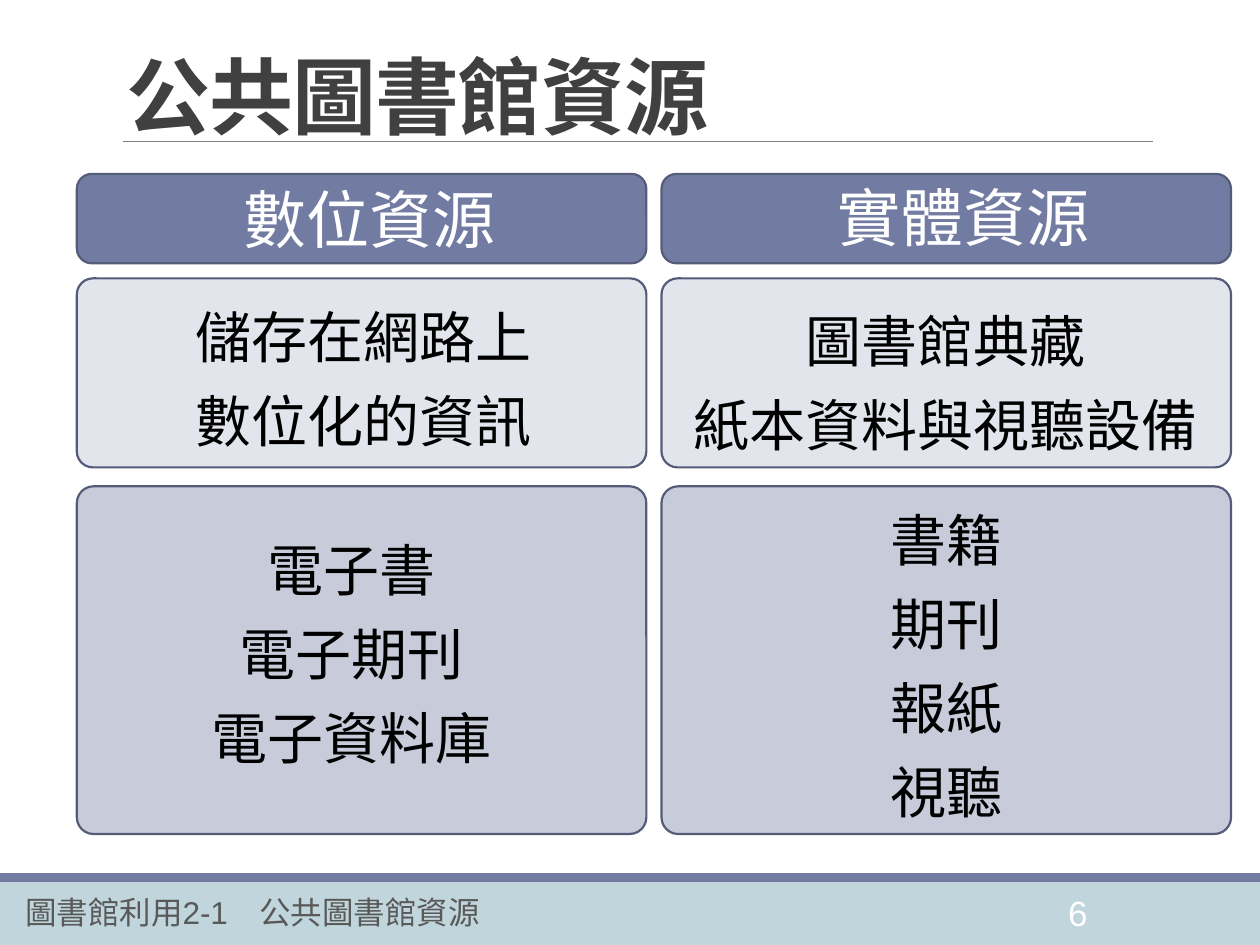
from pptx import Presentation
from pptx import util as u
from pptx.dml.color import RGBColor
from pptx.enum import shapes, text
from pptx.oxml import parse_xml
from pptx.oxml.ns import nsdecls, qn

WHITE = RGBColor(0xFF, 0xFF, 0xFF)
BLACK = RGBColor(0, 0, 0)
TITLE = RGBColor(0x40, 0x40, 0x40)
FOOTER = RGBColor(0x59, 0x59, 0x59)
RULE = RGBColor(0x80, 0x80, 0x80)
BAND = RGBColor(0xC0, 0xD6, 0xDC)
INDIGO = RGBColor(0x72, 0x7C, 0xA3)
OUTLINE = RGBColor(0x54, 0x5C, 0x79)
PALE = RGBColor(0xE3, 0xE5, 0xED)
MID = RGBColor(0xC7, 0xCB, 0xDA)

CJK = "Noto Sans CJK SC"
COLUMNS = (0.61, 5.25)
CARD_W = 4.52
ROWS = (
    (2.21, 1.5, PALE, 0.085),
    (3.86, 2.76, MID, 0.048),
    (1.38, 0.71, INDIGO, 0.167),
)
TEXTS = (
    ((0.96, 1.38, 3.94, 0.71), ["數位資源"]),
    ((5.68, 1.37, 3.94, 0.71), ["實體資源"]),
    ((0.57, 2.22, 4.64, 1.38), ["儲存在網路上", "數位化的資訊"]),
    ((5.32, 2.25, 4.37, 1.45), ["圖書館典藏", "紙本資料與視聽設備"]),
    ((0.82, 4.07, 3.94, 2.06), ["電子書", "電子期刊", "電子資料庫"]),
    ((5.54, 3.83, 3.94, 2.79), ["書籍", "期刊", "報紙", "視聽"]),
)


def inches(*values):
    return [u.Inches(v) for v in values]


def style_run(r, size, color, font="Arial", bold=False):
    r.font.size = u.Pt(size)
    r.font.bold = bold
    r.font.color.rgb = color
    r.font.name = font
    latin = r.font._element.find(qn("a:latin"))
    latin.addnext(parse_xml(f'<a:ea {nsdecls("a")} typeface="{CJK}"/>'))


def add_block(s, kind, box, fill, line=None):
    sp = s.shapes.add_shape(kind, *inches(*box))
    sp.shadow.inherit = False
    sp.fill.solid()
    sp.fill.fore_color.rgb = fill
    if line is None:
        sp.line.fill.background()
    else:
        sp.line.color.rgb = line
        sp.line.width = u.Pt(1.25)
    return sp


def add_card(s, left, row):
    top, height, fill, radius = row
    sp = add_block(s, shapes.MSO_SHAPE.ROUNDED_RECTANGLE,
                   (left, top, CARD_W, height), fill, OUTLINE)
    sp.adjustments[0] = radius


def add_text(s, box, lines, size, color, align=None, spacing=None):
    tf = s.shapes.add_textbox(*inches(*box)).text_frame
    tf.word_wrap = True
    tf.text = "\n".join(lines)
    for p in tf.paragraphs:
        p.alignment = align
        p.line_spacing = spacing
        for r in p.runs:
            style_run(r, size, color)
    return tf


def add_rule(s):
    line = s.shapes.add_connector(shapes.MSO_CONNECTOR.STRAIGHT,
                                  *inches(0.98, 1.12, 9.15, 1.12))
    line.line.color.rgb = RULE
    line.line.width = u.Pt(0.5)
    line._element.spPr.append(parse_xml(f'<a:effectLst {nsdecls("a")}/>'))


def add_footer(s):
    rect = shapes.MSO_SHAPE.RECTANGLE
    add_block(s, rect, (0, 7, 10, 0.5), BAND)
    add_block(s, rect, (0, 6.93, 10, 0.07), INDIGO)
    add_text(s, (8.38, 7.03, 0.7, 0.4), ["6"], 20, WHITE)
    tf = add_text(s, (0.1, 7.04, 4.65, 0.4),
                  ["圖書館利用2-1\t公共圖書館資源"], 18, FOOTER)
    tabs = parse_xml(f'<a:tabLst {nsdecls("a")}>'
                     f'<a:tab pos="{u.Inches(1.86)}" algn="l"/></a:tabLst>')
    tf.paragraphs[0]._p.get_or_add_pPr().append(tabs)


def set_title(s, wording):
    sp = s.shapes.title
    sp.left, sp.top, sp.width, sp.height = inches(0.9, 0.4, 8.25, 0.81)
    tf = sp.text_frame
    tf.text = wording
    tf.auto_size = text.MSO_AUTO_SIZE.NONE
    tf.vertical_anchor = text.MSO_ANCHOR.BOTTOM
    p = tf.paragraphs[0]
    p.alignment = text.PP_ALIGN.LEFT
    p.line_spacing = 0.85
    r = p.runs[0]
    style_run(r, 48, TITLE, CJK, True)
    r.font._element.set("spc", "-50")


def main():
    prs = Presentation()
    prs.slide_width, prs.slide_height = inches(10, 7.5)
    s = prs.slides.add_slide(prs.slide_layouts[5])
    set_title(s, "公共圖書館資源")
    add_footer(s)
    add_rule(s)
    for row in ROWS:
        for left in COLUMNS:
            add_card(s, left, row)
    for box, lines in TEXTS:
        heading = len(lines) == 1
        add_text(s, box, lines, 36 if heading else 32,
                 WHITE if heading else BLACK, text.PP_ALIGN.CENTER,
                 None if heading else u.Pt(48))
    prs.save("out.pptx")


if __name__ == "__main__":
    main()
